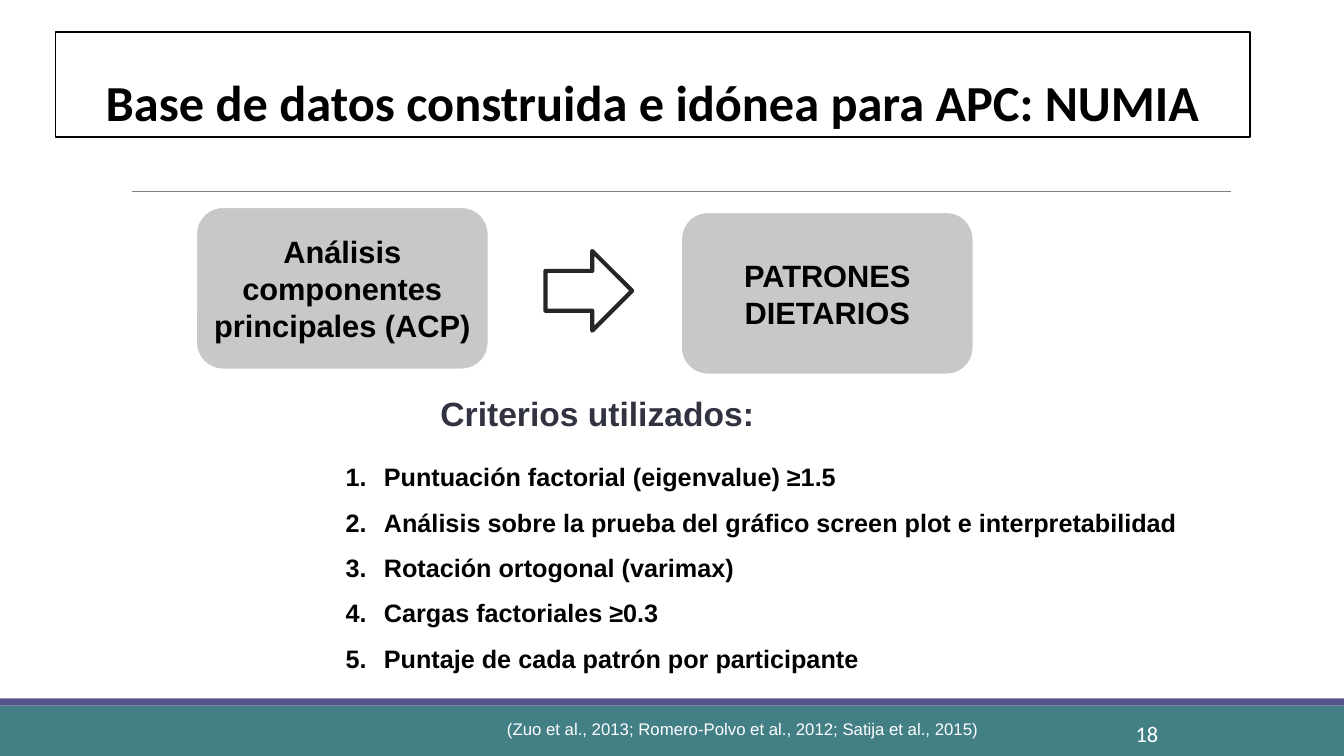
from lxml.etree import SubElement as Sub
from pptx import Presentation
from pptx.dml.color import RGBColor
from pptx.enum.shapes import MSO_CONNECTOR as Conn, MSO_SHAPE as Kind
from pptx.enum.text import MSO_ANCHOR as Anchor, MSO_AUTO_SIZE as Auto, PP_ALIGN as Align
from pptx.oxml.ns import qn
from pptx.util import Inches, Pt

BLACK = RGBColor(0, 0, 0)
WHITE = RGBColor(255, 255, 255)
TEAL = RGBColor(0x43, 0x80, 0x86)
PURPLE = RGBColor(0x53, 0x54, 0x8A)
GRAY = RGBColor(0x80, 0x80, 0x80)
SILVER = RGBColor(0xC8, 0xC8, 0xC8)
DARK = RGBColor(0x26, 0x26, 0x26)
SLATE = RGBColor(0x32, 0x33, 0x41)

TITLE = "Base de datos construida e idónea para APC: NUMIA"
STEPS = [
    ("PATRONES DIETARIOS", 6.75, 2.1),
    ("Análisis componentes principales (ACP)", 1.94, 2.05),
]
HEAD = "Criterios utilizados:"
RULES = [
    "Puntuación factorial (eigenvalue) ≥1.5",
    "Análisis sobre la prueba del gráfico screen plot e interpretabilidad",
    "Rotación ortogonal (varimax)",
    "Cargas factoriales ≥0.3",
    "Puntaje de cada patrón por participante",
]
CITE = "(Zuo et al., 2013; Romero-Polvo et al., 2012; Satija et al., 2015)"
PAGE = "18"

deck = Presentation()
deck.slide_width, deck.slide_height = Inches(13.33), Inches(7.5)
slide = deck.slides.add_slide(deck.slide_layouts[5])
shapes = slide.shapes


def write(shape, lines, size, color=BLACK, bold=True, font="Arial",
          align=Align.LEFT, gap=1.0, anchor=Anchor.TOP, count=False):
    frame = shape.text_frame
    frame.word_wrap = True
    frame.auto_size = Auto.NONE
    frame.vertical_anchor = anchor
    frame.text = "\n".join(lines)
    for para in frame.paragraphs:
        if count:
            props = para._p.get_or_add_pPr()
            props.set("marL", str(Inches(0.38)))
            props.set("indent", str(-Inches(0.38)))
            Sub(props, qn("a:buFont"), typeface="+mj-lt")
            Sub(props, qn("a:buAutoNum"), type="arabicPeriod")
        para.alignment = align
        para.line_spacing = gap
        para.font.size = Pt(size)
        para.font.name = font
        para.font.bold = bold
        para.font.color.rgb = color


def draw(kind, place, fill=None, line=None, width=1):
    shape = shapes.add_shape(kind, *map(Inches, place))
    shape.shadow.inherit = False
    paint(shape, fill, line, width)
    return shape


def paint(shape, fill, line, width):
    if fill is None:
        shape.fill.background()
    else:
        shape.fill.solid()
        shape.fill.fore_color.rgb = fill
    if line is None:
        shape.line.fill.background()
    else:
        shape.line.color.rgb = line
        shape.line.width = Pt(width)


def note(place, lines, size, **style):
    write(shapes.add_textbox(*map(Inches, place)), lines, size, **style)


draw(Kind.RECTANGLE, (0, 7, 13.33, 0.5), TEAL)
draw(Kind.RECTANGLE, (0, 6.93, 13.33, 0.07), PURPLE)

rule = shapes.add_connector(Conn.STRAIGHT, *map(Inches, (1.31, 1.9, 12.21, 1.9)))
rule.line.color.rgb = GRAY
rule.line.width = Pt(0.5)
Sub(rule._element.spPr, qn("a:effectLst"))

draw(Kind.RIGHT_ARROW, (5.41, 2.49, 0.86, 0.79), line=DARK, width=3)
for text, left, top in STEPS:
    step = draw(Kind.ROUNDED_RECTANGLE, (left, top, 2.91, 1.62), SILVER, WHITE, 2)
    write(step, [text], 22, align=Align.CENTER, anchor=Anchor.MIDDLE)

note((3.33, 4.38, 8.5, 2.37), RULES, 18, gap=1.5, count=True)
note((4.27, 3.65, 3.47, 0.63), [HEAD], 24, color=SLATE, gap=1.5, align=Align.JUSTIFY)
note((4.93, 7.08, 5, 0.3), [CITE], 12, color=WHITE, bold=False)

title = shapes.title
title.left, title.top, title.width, title.height = map(Inches, (0.55, 0.32, 11.85, 1.04))
paint(title, WHITE, BLACK, 1.25)
write(title, [TITLE], 36, font="Calibri", align=Align.CENTER, gap=0.9, anchor=Anchor.BOTTOM)

note((10.83, 7.06, 1.09, 0.44), [PAGE], 16, color=WHITE, bold=False,
     font="Calibri", align=Align.CENTER, anchor=Anchor.MIDDLE)

deck.save("out.pptx")
